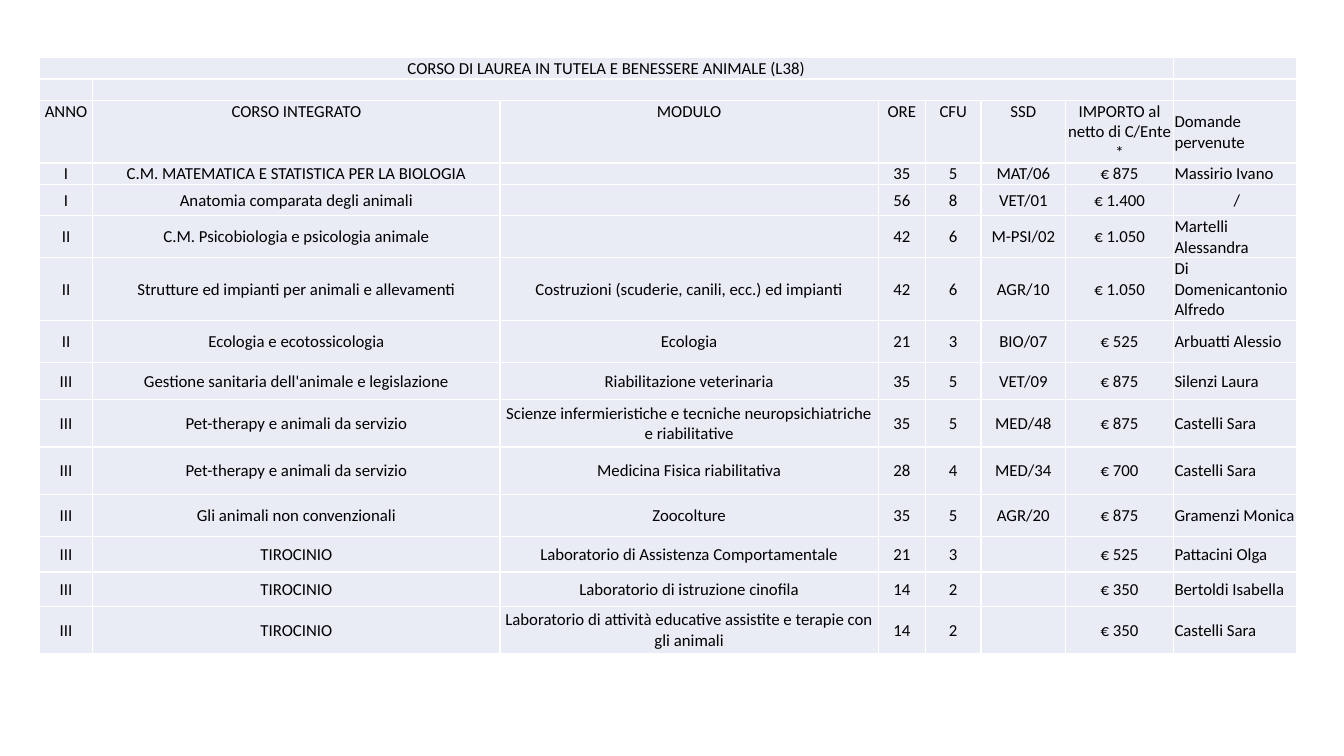
from dataclasses import dataclass

from lxml import etree
from pptx import Presentation
from pptx.dml.color import RGBColor
from pptx.enum.text import MSO_ANCHOR as ANCHOR, PP_ALIGN as ALIGN
from pptx.oxml.ns import qn
from pptx.util import Inches, Pt


@dataclass(frozen=True)
class Theme:
    font: str = "Calibri"
    size: int = 12
    text: str = "000000"
    cell: str = "E9EBF5"
    border: str = "FFFFFF"
    border_width: int = 1


THEME = Theme()

TITLE = "CORSO DI LAUREA IN TUTELA E BENESSERE ANIMALE (L38)"
HEADERS = ("ANNO", "CORSO INTEGRATO", "MODULO", "ORE", "CFU", "SSD",
           "IMPORTO al netto di C/Ente *", "Domande pervenute")
COURSES = [
    ("I", "C.M. MATEMATICA E STATISTICA PER LA BIOLOGIA", "",
     "35", "5", "MAT/06", "€ 875", "Massirio Ivano"),
    ("I", "Anatomia comparata degli animali", "",
     "56", "8", "VET/01", "€ 1.400", " /"),
    ("II", "C.M. Psicobiologia e psicologia animale", "",
     "42", "6", "M-PSI/02", "€ 1.050", "Martelli Alessandra"),
    ("II", "Strutture ed impianti per animali e allevamenti",
     "Costruzioni (scuderie, canili, ecc.) ed impianti",
     "42", "6", "AGR/10", "€ 1.050", "Di Domenicantonio Alfredo"),
    ("II", "Ecologia e ecotossicologia", "Ecologia",
     "21", "3", "BIO/07", "€ 525", "Arbuatti Alessio"),
    ("III", "Gestione sanitaria dell'animale e legislazione", "Riabilitazione veterinaria",
     "35", "5", "VET/09", "€ 875", "Silenzi Laura"),
    ("III", "Pet-therapy e animali da servizio",
     "Scienze infermieristiche e tecniche neuropsichiatriche e riabilitative",
     "35", "5", "MED/48", "€ 875", "Castelli Sara"),
    ("III", "Pet-therapy e animali da servizio", "Medicina Fisica riabilitativa",
     "28", "4", "MED/34", "€ 700", "Castelli Sara"),
    ("III", "Gli animali non convenzionali", "Zoocolture",
     "35", "5", "AGR/20", "€ 875", "Gramenzi Monica"),
    ("III", "TIROCINIO", "Laboratorio di Assistenza Comportamentale",
     "21", "3", "", "€ 525", "Pattacini Olga"),
    ("III", "TIROCINIO", "Laboratorio di istruzione cinofila",
     "14", "2", "", "€ 350", "Bertoldi Isabella"),
    ("III", "TIROCINIO",
     "Laboratorio di attività educative assistite e terapie con gli animali",
     "14", "2", "", "€ 350", "Castelli Sara"),
]
BLANK = ("",) * len(HEADERS)
ROWS = [(TITLE,) + BLANK[1:], BLANK, HEADERS, *COURSES]
COL_WIDTHS = (0.53, 4.04, 3.75, 0.47, 0.55, 0.84, 1.07, 1.22)
ROW_HEIGHTS = (0.18, 0.18, 0.33, 0.18, 0.31, 0.31, 0.58, 0.42,
               0.37, 0.47, 0.47, 0.42, 0.35, 0.34, 0.47)
TITLE_ROW, HEADER_ROW, FIRST_COURSE_ROW = 0, 2, 3
AMOUNT_COL, APPLICANT_COL = 6, 7


def write_text(cell, text, *, align, anchor):
    cell.vertical_anchor = anchor
    p = cell.text_frame.paragraphs[0]
    p.alignment = align
    if not text:
        # An empty cell takes its line height from the end-of-paragraph size
        p._p.get_or_add_endParaRPr().set("sz", str(THEME.size * 100))
        return
    r = p.add_run()
    r.text = text
    r.font.name = THEME.font
    r.font.size = Pt(THEME.size)
    r.font.color.rgb = RGBColor.from_string(THEME.text)


def paint_cell(cell):
    """Set the margins, borders and fill of a cell."""
    cell.margin_left = cell.margin_right = cell.margin_top = Inches(0.01)
    cell.margin_bottom = 0
    tc_pr = cell._tc.get_or_add_tcPr()
    for side in ("a:lnL", "a:lnR", "a:lnT", "a:lnB"):
        ln = etree.SubElement(tc_pr, qn(side), w=str(Pt(THEME.border_width)))
        fill = etree.SubElement(ln, qn("a:solidFill"))
        etree.SubElement(fill, qn("a:srgbClr"), val=THEME.border)
    cell.fill.solid()
    cell.fill.fore_color.rgb = RGBColor.from_string(THEME.cell)


prs = Presentation()
prs.slide_width, prs.slide_height = Inches(13.33), Inches(7.5)
s = prs.slides.add_slide(prs.slide_layouts[6])

frame = s.shapes.add_table(len(ROWS), len(HEADERS), Inches(0.39), Inches(0.57),
                           Inches(12.46), Inches(5.86))
table = frame.table
table.first_row = table.horz_banding = False
for column, width in zip(table.columns, COL_WIDTHS):
    column.width = Inches(width)
for row, height in zip(table.rows, ROW_HEIGHTS):
    row.height = Inches(height)
frame.height = Inches(5.86)

for i, texts in enumerate(ROWS):
    for j, text in enumerate(texts):
        cell = table.cell(i, j)
        paint_cell(cell)
        if i == TITLE_ROW:
            anchor = ANCHOR.BOTTOM
        elif (i <= HEADER_ROW and j < APPLICANT_COL
              or i == FIRST_COURSE_ROW and j < AMOUNT_COL):
            anchor = ANCHOR.TOP
        else:
            anchor = ANCHOR.MIDDLE
        named = j == APPLICANT_COL and not text.endswith("/")
        write_text(cell, text, align=ALIGN.LEFT if named else ALIGN.CENTER, anchor=anchor)

table.cell(0, 0).merge(table.cell(0, AMOUNT_COL))
table.cell(1, 1).merge(table.cell(1, AMOUNT_COL))

prs.save("out.pptx")
